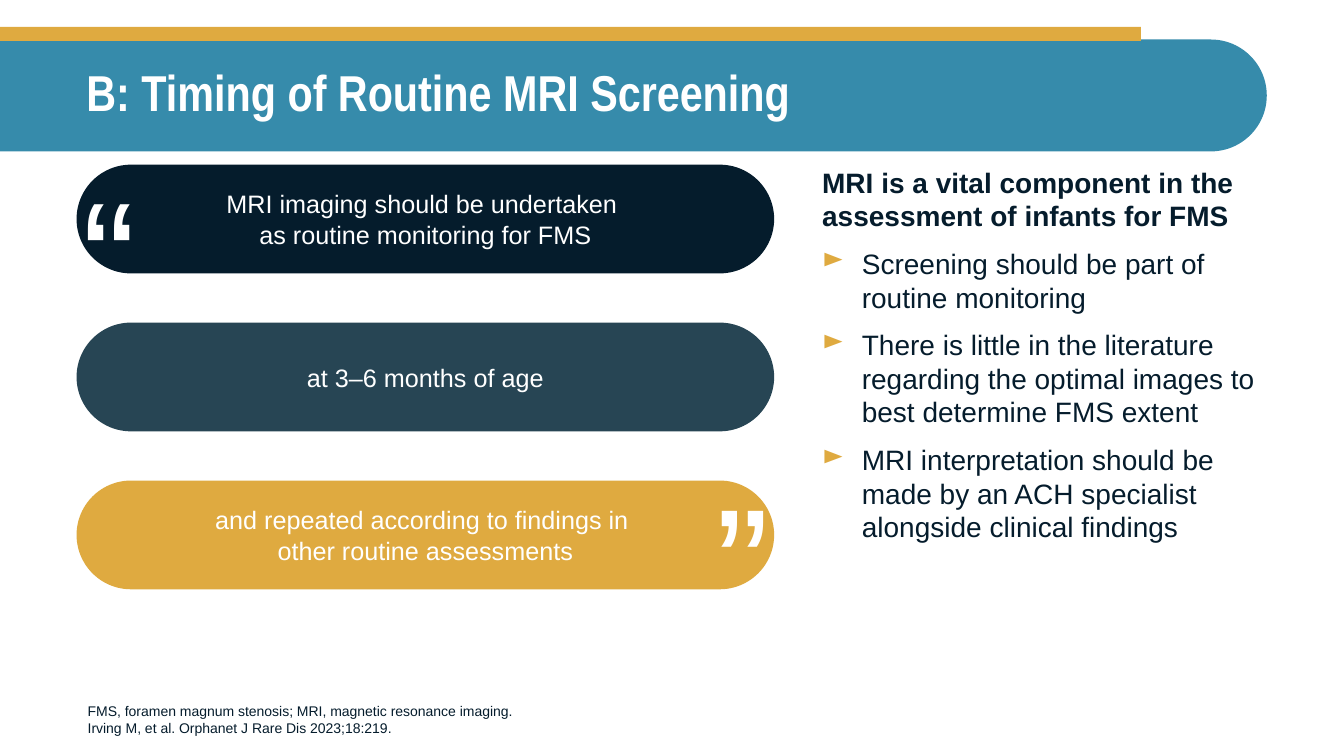
from lxml import etree
from pptx import Presentation
from pptx.dml.color import RGBColor
from pptx.enum.shapes import MSO_SHAPE
from pptx.enum.text import MSO_ANCHOR, PP_ALIGN
from pptx.oxml.ns import qn
from pptx.util import Cm, Pt

ROUNDED = MSO_SHAPE.ROUNDED_RECTANGLE
ROUND_TWO = MSO_SHAPE.ROUND_2_SAME_RECTANGLE
RECTANGLE = MSO_SHAPE.RECTANGLE
MIDDLE, BOTTOM, TOP = MSO_ANCHOR.MIDDLE, MSO_ANCHOR.BOTTOM, MSO_ANCHOR.TOP
CENTER = PP_ALIGN.CENTER

NAVY, SLATE, GOLD, TEAL, WHITE = "051C2C", "274554", "DFAA40", "368BAB", "FFFFFF"


def add_filled(kind, left, top, width, height, color):
    shape = slide.shapes.add_shape(kind, Cm(left), Cm(top), Cm(width), Cm(height))
    shape.shadow.inherit = False
    shape.fill.solid()
    shape.fill.fore_color.rgb = RGBColor.from_string(color)
    shape.line.fill.background()
    return shape


def write(shape, lines, size, color, anchor=TOP, wrap=True, font="Arial"):
    """Put one paragraph per line in the shape and return the paragraphs."""
    frame = shape.text_frame
    frame.word_wrap = wrap
    frame.vertical_anchor = anchor
    for i, line in enumerate(lines):
        paragraph = frame.add_paragraph() if i else frame.paragraphs[0]
        paragraph.text = line
        paragraph.font.size = Pt(size)
        paragraph.font.name = font
        paragraph.font.color.rgb = RGBColor.from_string(color)
    return frame.paragraphs


prs = Presentation()
prs.slide_width, prs.slide_height = Cm(33.87), Cm(19.05)
slide = prs.slides.add_slide(prs.slide_layouts[6])

# Header: the banner is turned so that its rounded end points right
banner = add_filled(ROUND_TWO, 14.55, -13.56, 2.82, 31.93, TEAL)
banner.adjustments[0], banner.adjustments[1] = 0, 0.5
banner.rotation = 270
add_filled(RECTANGLE, 0, 0.68, 28.75, 0.35, GOLD)

title = slide.shapes.add_textbox(Cm(1.93), Cm(0.99), Cm(30), Cm(2.8))
heading = write(title, ["B: Timing of Routine MRI Screening"], 36, WHITE,
                MIDDLE, font="Arial Narrow")[0]
heading.font.bold = True
heading.line_spacing = 0.9

# Key points
body = slide.shapes.add_textbox(Cm(20.47), Cm(4.04), Cm(11.48), Cm(12.6))
key_message, *points = write(body, [
    "MRI is a vital component in the assessment of infants for FMS",
    "Screening should be part of routine monitoring",
    "There is little in the literature regarding the optimal images to best determine FMS extent",
    "MRI interpretation should be made by an ACH specialist alongside clinical findings",
], 20, NAVY)
key_message.font.bold = True
for point in points:
    point.space_before = Pt(10)
    properties = point._p.get_or_add_pPr()
    properties.set("marL", str(Cm(1)))
    properties.set("indent", str(-Cm(1)))
    bullet_color = etree.Element(qn("a:buClr"))
    etree.SubElement(bullet_color, qn("a:srgbClr"), val=GOLD)
    bullet = etree.Element(qn("a:buChar"), char="►")
    properties.insert_element_before(bullet_color, "a:defRPr")
    properties.insert_element_before(bullet, "a:defRPr")

footnote = slide.shapes.add_textbox(Cm(1.96), Cm(17.25), Cm(25.1), Cm(1.42))
write(footnote, [
    "FMS, foramen magnum stenosis; MRI, magnetic resonance imaging.",
    "Irving M, et al. Orphanet J Rare Dis 2023;18:219.",
], 10, NAVY, BOTTOM)

# Quoted recommendation in three parts
quote_parts = [
    ("MRI imaging should be undertaken \vas routine monitoring for FMS", NAVY),
    ("at 3–6 months of age", SLATE),
    ("and repeated according to findings in \vother routine assessments", GOLD),
]
for row, (words, color) in enumerate(quote_parts):
    pill = add_filled(ROUNDED, 1.93, 4.15 + row * 3.98, 17.58, 2.74, color)
    pill.adjustments[0] = 0.5
    write(pill, [words], 18, WHITE, MIDDLE)[0].alignment = CENTER

for left, top, turn in [(1.83, 3.76, 0), (17.75, 10.01, 180)]:
    quote_mark = slide.shapes.add_textbox(Cm(left), Cm(top), Cm(1.88), Cm(5.18))
    quote_mark.rotation = turn
    write(quote_mark, ["“"], 115, WHITE, wrap=False)

prs.save("out.pptx")
